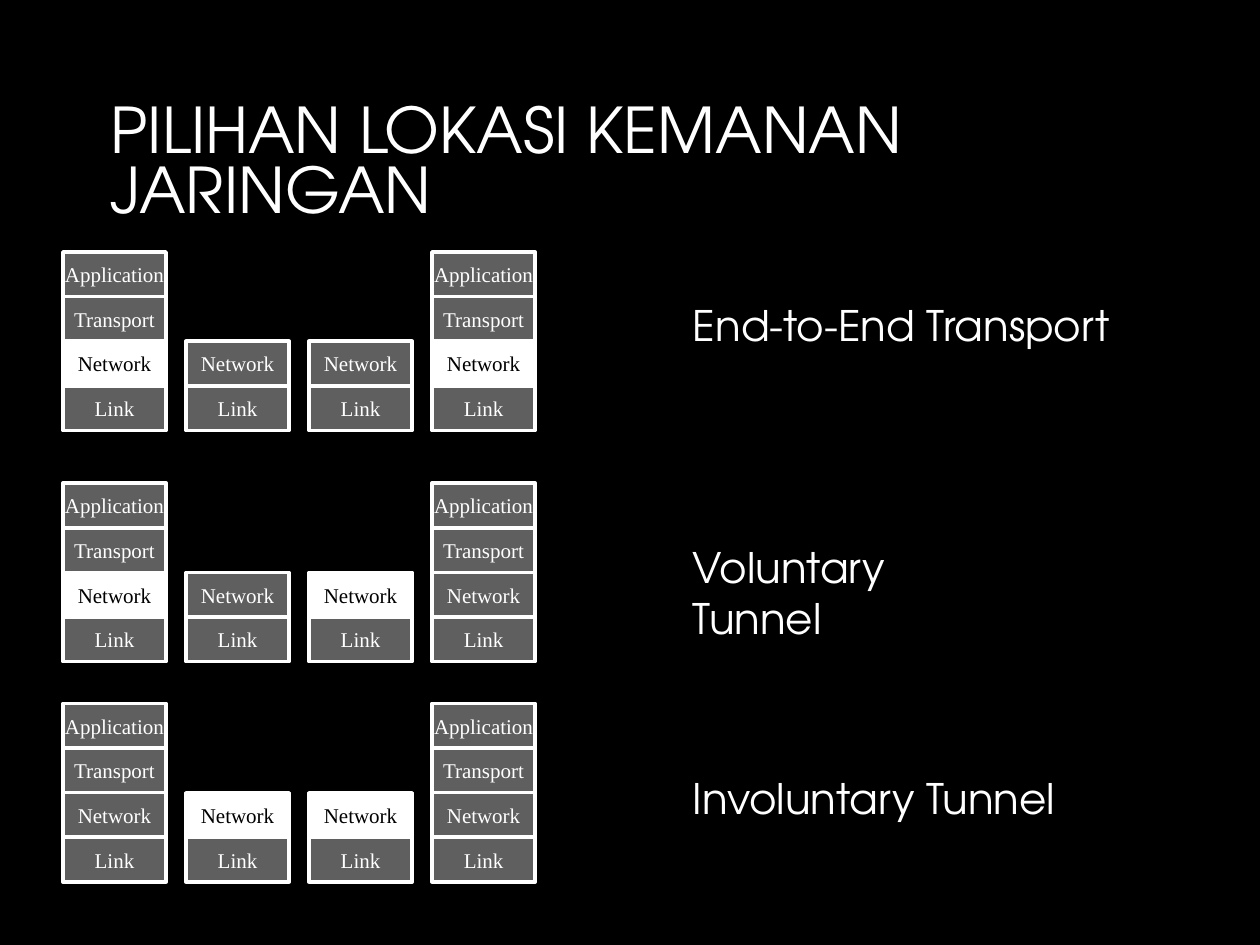
from dataclasses import dataclass
from pptx import Presentation
from pptx.dml.color import RGBColor
from pptx.enum.shapes import MSO_SHAPE
from pptx.enum.text import MSO_ANCHOR, PP_ALIGN
from pptx.slide import Slide
from pptx.util import Cm, Pt

RECTANGLE = MSO_SHAPE.RECTANGLE
TOP, MIDDLE, BOTTOM = MSO_ANCHOR.TOP, MSO_ANCHOR.MIDDLE, MSO_ANCHOR.BOTTOM
LEFT, CENTER = PP_ALIGN.LEFT, PP_ALIGN.CENTER

COLORS = {"background": "000000", "layer": "5F5F5F", "secured": "FFFFFF",
          "light": "FFFFFF", "dark": "000000"}
LAYERS = ["Application", "Transport", "Network", "Link"]
STACK_SIZES = [4, 2, 2, 4]
STACK_LEFT, STACK_PITCH = 1.27, 2.48
LAYER_WIDTH, LAYER_HEIGHT = 2.08, 0.9
SCENARIOS = [
    ("End-to-End Transport", 5.08, {0, 3}, 5.92, 9.22),
    ("Voluntary Tunnel", 9.74, {0, 2}, 10.8, 7.16),
    ("Involuntary Tunnel", 14.18, {1, 2}, 15.44, 7.92),
]


def color(name):
    return RGBColor.from_string(COLORS[name])


@dataclass
class Painter:
    """Draws styled elements on the current slide."""
    slide: Slide
    display_font: str = "TeX Gyre Adventor"
    layer_font: str = "Times New Roman"

    def background(self):
        fill = self.slide.background.fill
        fill.solid()
        fill.fore_color.rgb = color("background")

    def add_text(self, frame, text, font, size, ink, align=LEFT):
        para = frame.paragraphs[0]
        para.alignment = align
        span = para.add_run()
        span.text = text
        span.font.name = font
        span.font.size = Pt(size)
        span.font.color.rgb = color(ink)
        return para

    def label(self, text, left, top, width, height, size, anchor=TOP):
        box = self.slide.shapes.add_textbox(Cm(left), Cm(top), Cm(width), Cm(height))
        frame = box.text_frame
        frame.word_wrap = True
        frame.vertical_anchor = anchor
        return frame, self.add_text(frame, text, self.display_font, size, "light")

    def title(self, text):
        frame, para = self.label(text, 1.9, 1.35, 21.6, 3.38, 36, BOTTOM)
        frame.margin_left = frame.margin_right = Cm(0.33)
        frame.margin_top = frame.margin_bottom = Cm(0.18)
        para.line_spacing = 0.8

    def layer(self, text, left, top, secured):
        box = self.slide.shapes.add_shape(
            RECTANGLE, Cm(left), Cm(top), Cm(LAYER_WIDTH), Cm(LAYER_HEIGHT))
        box.shadow.inherit = False
        box.fill.solid()
        box.fill.fore_color.rgb = color("secured" if secured else "layer")
        box.line.color.rgb = color("light")
        box.line.width = Pt(2)
        frame = box.text_frame
        frame.word_wrap = False
        frame.vertical_anchor = MIDDLE
        ink = "dark" if secured else "light"
        self.add_text(frame, text, self.layer_font, 12, ink, CENTER)

    def stack(self, left, top, size, secured):
        first = len(LAYERS) - size
        for row, name in reversed(list(enumerate(LAYERS))[first:]):
            self.layer(name, left, top + row * LAYER_HEIGHT,
                       secured and name == "Network")


def main():
    deck = Presentation()
    deck.slide_width, deck.slide_height = Cm(25.4), Cm(19.05)
    page = Painter(deck.slides.add_slide(deck.slide_layouts[6]))
    page.background()
    page.title("PILIHAN LOKASI KEMANAN JARINGAN")
    for caption, top, secured, caption_top, caption_width in SCENARIOS:
        for column, size in enumerate(STACK_SIZES):
            page.stack(STACK_LEFT + column * STACK_PITCH, top, size, column in secured)
        page.label(caption, 13.72, caption_top, caption_width, 1.27, 24)
    deck.save("out.pptx")


if __name__ == "__main__":
    main()
